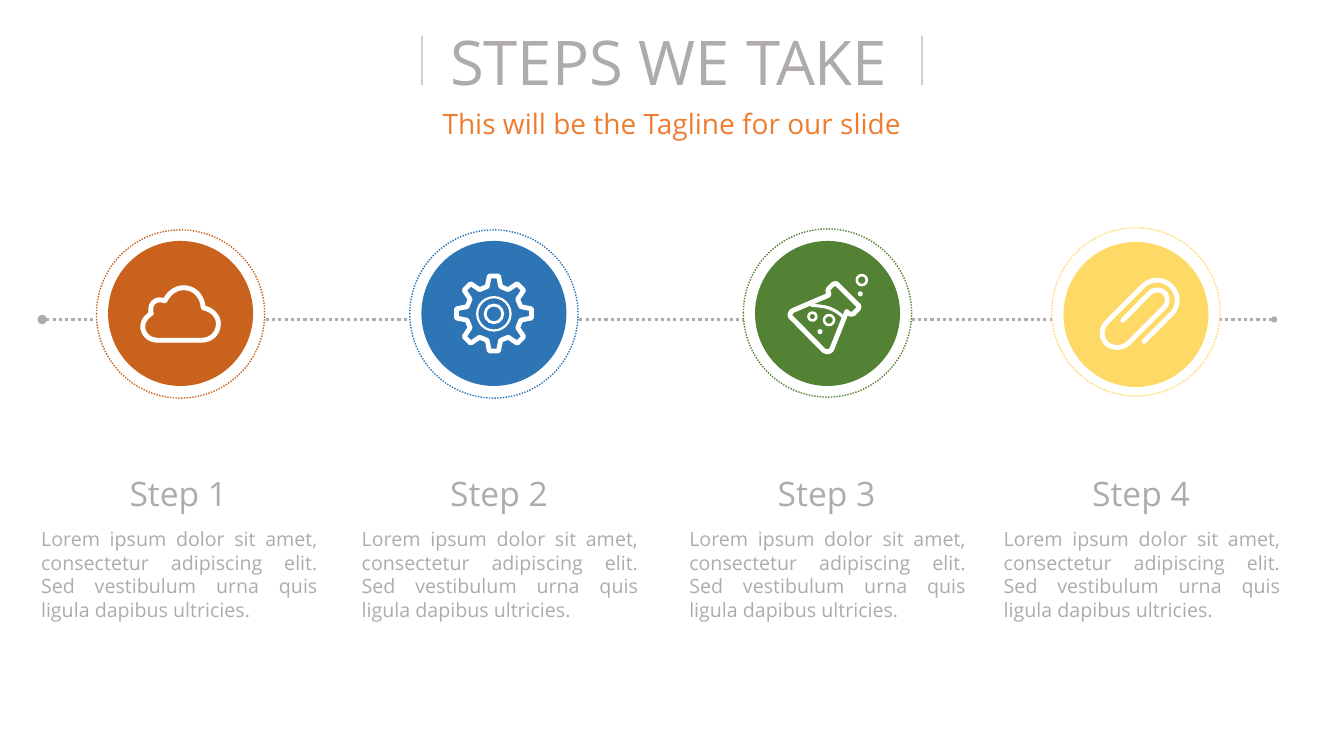
"""Build the four-step process slide."""
from math import cos, radians, sin

from lxml.etree import SubElement
from pptx import Presentation
from pptx.dml.color import RGBColor
from pptx.enum.dml import MSO_LINE
from pptx.enum.shapes import MSO_CONNECTOR as Conn, MSO_SHAPE as Shape
from pptx.enum.text import MSO_AUTO_SIZE as AutoSize, PP_ALIGN as Align
from pptx.oxml.ns import qn
from pptx.util import Pt

WHITE = RGBColor(0xFF, 0xFF, 0xFF)
GRAY = RGBColor(0xAF, 0xAB, 0xAB)
PALE_GRAY = RGBColor(0xD0, 0xCE, 0xCE)
TAGLINE = RGBColor(0xED, 0x7D, 0x31)
RUST = RGBColor(0xC8, 0x62, 0x1C)
BLUE = RGBColor(0x2E, 0x75, 0xB6)
GREEN = RGBColor(0x54, 0x82, 0x35)
YELLOW = RGBColor(0xFF, 0xD9, 0x66)

RING_RADIUS, DISC_RADIUS = 60.1, 51.8
HEADING_TOP, BODY_TOP = 334.1, 373
LOREM = ("Lorem ipsum dolor sit amet, consectetur adipiscing elit. "
         "Sed vestibulum urna quis ligula dapibus ultricies.")

CLOUD = [(-16.6, 19.1), (-22.3, 19.1, -27, 14.8, -27, 9.4),
         (-27, 5.8, -24.8, 2.5, -20.9, 0), (-21.6, -1.4, -21.2, -2.2, -21.2, -3.6),
         (-21.2, -6.8, -18.4, -9.7, -15.1, -9.7), (-13.7, -9.7, -12.2, -9.4, -11.2, -9),
         (-8.6, -14.4, -3.6, -18.4, 2.2, -18.4), (9.4, -18.4, 15.5, -13, 16.2, -4),
         (22.3, -2.9, 27, 1.8, 27, 7.2), (27, 14, 22, 19.1, 15.1, 19.1)]
GEAR = [(radius * sin(radians(tooth + turn)), -radius * cos(radians(tooth + turn)))
        for tooth in range(0, 360, 45)
        for turn, radius in ((-14, 19.8), (-7, 27), (7, 27), (14, 19.8))]
FLASK = [(0.7, -13), (-24.5, -2.2), (-27.4, -0.7, -27.4, 2.2, -25.2, 3.6),
         (-2.9, 26.3), (-0.7, 28, 2.2, 27.4, 3.2, 25.2), (13.7, -1.4), (15.1, 0),
         (16.6, 0.7, 18, 0.7, 18.7, 0), (21.6, -2.9), (22.7, -4.3, 22.7, -5.8, 21.2, -6.5),
         (7.2, -20.5), (6.5, -21.6, 5, -21.6, 3.6, -20.5), (1.1, -18),
         (0, -16.6, 0, -15.5, 1.1, -14.4)]
LIQUID = [(-11.5, -5.8), (-5, -5, 2.2, -5.8, 10.8, 2.2)]
CLIP = [(5.8, 19.4), (25.2, 0), (31, -5.8, 31, -14.4, 25.2, -20.2),
        (19.4, -25.9, 10.8, -25.9, 5, -20.2), (-20.9, 5.8),
        (-25.2, 10.1, -25.2, 16.6, -20.9, 20.9), (-16.6, 24.5, -10.1, 24.5, -5.8, 20.9),
        (20.5, -5.4), (23, -7.9, 23, -13, 20.5, -15.5),
        (18, -18, 13, -18, 10.1, -15.5), (-9.4, 4.3)]

STEPS = [
    dict(color=RUST, x=129, y=223.9, ring_y=224.3, left=22.3,
         strokes=[(CLOUD, 3.5, True)], circles=[]),
    dict(color=BLUE, x=352.8, y=223.9, ring_y=224.3, left=251.3,
         strokes=[(GEAR, 3.4, True)], circles=[(0, 0.3, 11.9, 1.6), (0, 0.3, 6.3, 2)]),
    dict(color=GREEN, x=591.1, y=223.9, ring_y=223.6, left=485.3,
         strokes=[(FLASK, 3.5, True), (LIQUID, 2.2, False)],
         circles=[(1.1, 4.7, 3.6, 1.8), (24.5, -23.8, 3.6, 1.8), (-10.8, 2.2, 2.8, 1.8),
                  (-5.4, 13, 1.8, 0), (23.4, -14, 1.8, 0)]),
    dict(color=YELLOW, x=811.4, y=224.6, ring_y=222.8, left=709.9,
         strokes=[(CLIP, 3.4, False)], circles=[]),
]


def flatten(segments, pieces=10):
    """Turn lines and cubic curves into a list of points."""
    points = [segments[0]]
    for segment in segments[1:]:
        if len(segment) == 2:
            points.append(segment)
            continue
        corners = [points[-1], segment[:2], segment[2:4], segment[4:]]
        for piece in range(1, pieces + 1):
            t = piece / pieces
            weights = ((1 - t) ** 3, 3 * t * (1 - t) ** 2, 3 * t * t * (1 - t), t ** 3)
            points.append(tuple(sum(w * c[axis] for w, c in zip(weights, corners))
                                for axis in (0, 1)))
    return points


class StepsSlide:
    """Hold the style and the slide, and draw each kind of element."""

    font_name = "Open Sans"

    def __init__(self, slide):
        self.slide = slide
        self.shapes = slide.shapes

    def apply(self, target, formats):
        for name, value in formats.items():
            setattr(target, name, value)

    def outline(self, line, color, width, **formats):
        line.color.rgb = color
        self.apply(line, dict(width=Pt(width), **formats))

    def text(self, words, left, top, width, height, size, color=GRAY, align=Align.CENTER):
        frame = self.shapes.add_textbox(Pt(left), Pt(top), Pt(width), Pt(height)).text_frame
        self.apply(frame, dict(word_wrap=True, auto_size=AutoSize.SHAPE_TO_FIT_TEXT))
        paragraph = frame.paragraphs[0]
        paragraph.alignment = align
        run = paragraph.add_run()
        run.text = words
        self.apply(run.font, dict(name=self.font_name, size=Pt(size)))
        run.font.color.rgb = color

    def rule(self, x1, y1, x2, y2, color, width, ends=(), **formats):
        connector = self.shapes.add_connector(Conn.STRAIGHT, Pt(x1), Pt(y1), Pt(x2), Pt(y2))
        self.outline(connector.line, color, width, **formats)
        properties = connector.element.spPr
        for tag, size in ends:
            SubElement(properties.find(qn("a:ln")), qn(tag), type="oval", w=size, len=size)
        SubElement(properties, qn("a:effectLst"))

    def circle(self, x, y, radius, fill=None, line=None, width=0, **formats):
        oval = self.shapes.add_shape(Shape.OVAL, Pt(x - radius), Pt(y - radius),
                                     Pt(2 * radius), Pt(2 * radius))
        oval.shadow.inherit = False
        if fill is None:
            oval.fill.background()
        else:
            oval.fill.solid()
            oval.fill.fore_color.rgb = fill
        if line is None:
            oval.line.fill.background()
        else:
            self.outline(oval.line, line, width, **formats)

    def stroke(self, segments, x, y, width, closed):
        points = [(Pt(x + dx), Pt(y + dy)) for dx, dy in flatten(segments)]
        builder = self.shapes.build_freeform(*points[0])
        builder.add_line_segments(points[1:], close=closed)
        icon = builder.convert_to_shape()
        icon.shadow.inherit = False
        icon.fill.background()
        self.outline(icon.line, WHITE, width)
        line = icon.element.spPr.find(qn("a:ln"))
        line.set("cap", "rnd")
        SubElement(line, qn("a:round"))

    def step(self, number, color, x, y, ring_y, left, strokes, circles):
        self.text(f"Step {number}", left + 51.8, HEADING_TOP, 106.6, 36, 24)
        self.text(LOREM, left, BODY_TOP, 211.7, 74.9, 14, align=Align.JUSTIFY)
        self.circle(x, ring_y, RING_RADIUS, WHITE, color, 1, dash_style=MSO_LINE.ROUND_DOT)
        self.circle(x, y, DISC_RADIUS, color)
        for segments, width, closed in strokes:
            self.stroke(segments, x, y, width, closed)
        for dx, dy, radius, width in circles:
            paint = dict(line=WHITE, width=width) if width else dict(fill=WHITE)
            self.circle(x + dx, y + dy, radius, **paint)


def main():
    deck = Presentation()
    deck.slide_width, deck.slide_height = Pt(960), Pt(540)
    page = StepsSlide(deck.slides.add_slide(deck.slide_layouts[6]))
    page.rule(30.2, 228.2, 910.1, 228.2, GRAY, 2.25, dash_style=MSO_LINE.ROUND_DOT,
              ends=(("a:headEnd", "med"), ("a:tailEnd", "sm")))
    page.text("This will be the Tagline for our slide", 241.9, 72.7, 475.9, 31.7, 20, TAGLINE)
    page.text("STEPS WE TAKE", 154.1, 13.7, 647.3, 60.5, 44)
    for x in (301.7, 658.8):
        page.rule(x, 25.9, x, 60.5, PALE_GRAY, 1.5)
    for number, step in enumerate(STEPS, 1):
        page.step(number, **step)
    deck.save("out.pptx")


if __name__ == "__main__":
    main()
